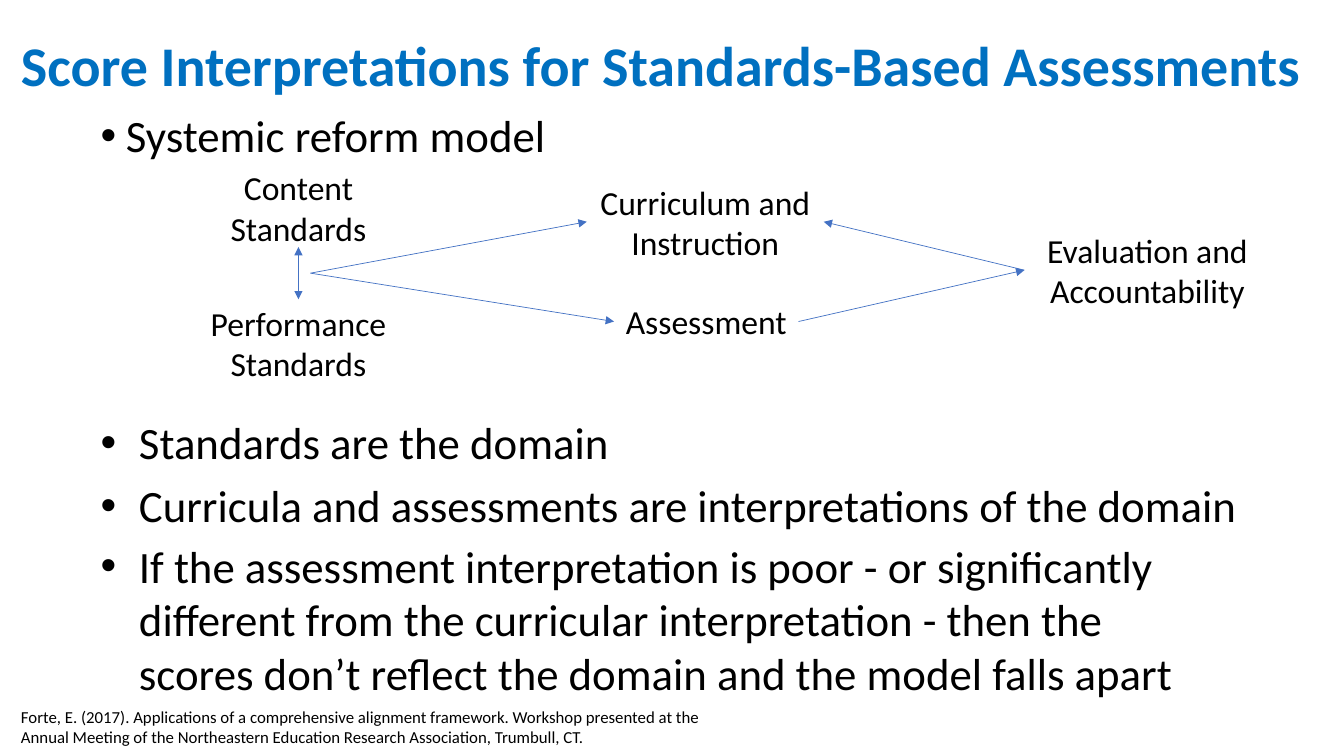
"""Build the slide on score interpretations for standards-based assessments."""
from dataclasses import dataclass
from typing import Optional, Union

from lxml import etree
from pptx import Presentation
from pptx import util as u
from pptx.dml.color import RGBColor
from pptx.enum import shapes, text
from pptx.oxml import ns

TITLE_BLUE = RGBColor(0x00, 0x70, 0xC0)
ARROW_BLUE = RGBColor(0x44, 0x72, 0xC4)
BLACK = RGBColor(0x00, 0x00, 0x00)

TOP, LEFT, BOTTOM, RIGHT = range(4)


@dataclass(frozen=True)
class Box:
    words: str
    left: float
    top: float
    width: float
    height: float
    size: int = 32
    color: RGBColor = BLACK
    bold: bool = False
    centered: bool = False
    middle: bool = False
    spacing: Optional[float] = None
    indent: float = 0


@dataclass(frozen=True)
class Side:
    node: str
    site: int


@dataclass(frozen=True)
class Point:
    x: float
    y: float


@dataclass(frozen=True)
class Arrow:
    start: Union[Side, Point]
    end: Side
    both: bool = False


def node(words: str, left: float, top: float, width: float, height: float) -> Box:
    """Return a centred label of the reform model."""
    return Box(words, left, top, width, height, 24, centered=True, middle=True)


TEXTS = (
    Box("Score Interpretations for Standards-Based Assessments",
        0.11, -0.08, 13.01, 1.52, 40, TITLE_BLUE, bold=True, middle=True, spacing=0.9),
    Box("Systemic reform model", 0.9, 1.08, 10.41, 0.63, spacing=0.9, indent=0.25),
    Box("Standards are the domain", 0.9, 4.07, 10.41, 0.66, indent=0.38),
    Box("Curricula and assessments are interpretations of the domain",
        0.9, 4.69, 12.15, 0.67, indent=0.38),
    Box("If the assessment interpretation is poor - or significantly different from "
        "the curricular interpretation - then the scores don’t reflect the domain "
        "and the model falls apart", 0.9, 5.29, 11.12, 2.12, indent=0.38),
    Box("Forte, E. (2017). Applications of a comprehensive alignment framework. "
        "Workshop presented at the Annual Meeting of the Northeastern Education "
        "Research Association, Trumbull, CT.", 0.11, 6.96, 7.2, 0.5, 12),
)

NODES = {
    "content": node("Content Standards", 1.95, 1.67, 2.02, 0.78),
    "performance": node("Performance Standards", 1.95, 2.97, 2.02, 0.87),
    "curriculum": node("Curriculum and Instruction", 5.82, 1.92, 2.35, 0.56),
    "assessment": node("Assessment", 6.09, 2.91, 1.83, 0.56),
    "evaluation": node("Evaluation and Accountability", 10.16, 2.18, 2.44, 1),
}

STANDARDS = Point(3.08, 2.71)
ARROWS = (
    Arrow(Side("content", BOTTOM), Side("performance", TOP), both=True),
    Arrow(STANDARDS, Side("curriculum", LEFT)),
    Arrow(STANDARDS, Side("assessment", LEFT)),
    Arrow(Side("assessment", RIGHT), Side("evaluation", LEFT)),
    Arrow(Side("evaluation", LEFT), Side("curriculum", RIGHT)),
)


def assign(target: object, values: dict) -> None:
    """Set each named attribute on the target."""
    for name, value in values.items():
        setattr(target, name, value)


def add_bullet(p, indent: float) -> None:
    """Give the paragraph a hanging round bullet."""
    pPr = p._p.get_or_add_pPr()
    pPr.set("marL", str(u.Inches(indent)))
    pPr.set("indent", str(u.Inches(-indent)))
    etree.SubElement(pPr, ns.qn("a:buFont"), typeface="Arial")
    etree.SubElement(pPr, ns.qn("a:buChar"), char="•")


def add_box(s, box: Box):
    """Draw a text box and return its shape."""
    sp = s.shapes.add_textbox(*map(u.Inches, (box.left, box.top, box.width, box.height)))
    tf = sp.text_frame
    anchor = text.MSO_ANCHOR.MIDDLE if box.middle else text.MSO_ANCHOR.TOP
    assign(tf, {"word_wrap": True, "vertical_anchor": anchor})
    p = tf.paragraphs[0]
    if box.indent:
        add_bullet(p, box.indent)
    align = text.PP_ALIGN.CENTER if box.centered else text.PP_ALIGN.LEFT
    assign(p, {"alignment": align, "line_spacing": box.spacing})
    r = p.add_run()
    r.text = box.words
    assign(r.font, {"name": "Calibri", "size": u.Pt(box.size), "bold": box.bold})
    r.font.color.rgb = box.color
    return sp


def add_arrow(s, arrow: Arrow, labels: dict) -> None:
    """Draw an arrow joined to the labels it links."""
    start = arrow.start if isinstance(arrow.start, Point) else Point(0, 0)
    x, y = u.Inches(start.x), u.Inches(start.y)
    line = s.shapes.add_connector(shapes.MSO_CONNECTOR.STRAIGHT, x, y, x, y)
    if isinstance(arrow.start, Side):
        line.begin_connect(labels[arrow.start.node], arrow.start.site)
    line.end_connect(labels[arrow.end.node], arrow.end.site)
    line.line.color.rgb = ARROW_BLUE
    line.line.width = u.Pt(0.5)
    ln = line.line._get_or_add_ln()
    for tag in ("a:headEnd", "a:tailEnd") if arrow.both else ("a:tailEnd",):
        etree.SubElement(ln, ns.qn(tag), type="triangle")
    etree.SubElement(line._element.spPr, ns.qn("a:effectLst"))


def main() -> None:
    """Build and save the slide."""
    prs = Presentation()
    assign(prs, {"slide_width": u.Inches(13.33), "slide_height": u.Inches(7.5)})
    s = prs.slides.add_slide(prs.slide_layouts[6])
    for box in TEXTS:
        add_box(s, box)
    labels = {name: add_box(s, box) for name, box in NODES.items()}
    for arrow in ARROWS:
        add_arrow(s, arrow, labels)
    prs.save("out.pptx")


if __name__ == "__main__":
    main()
